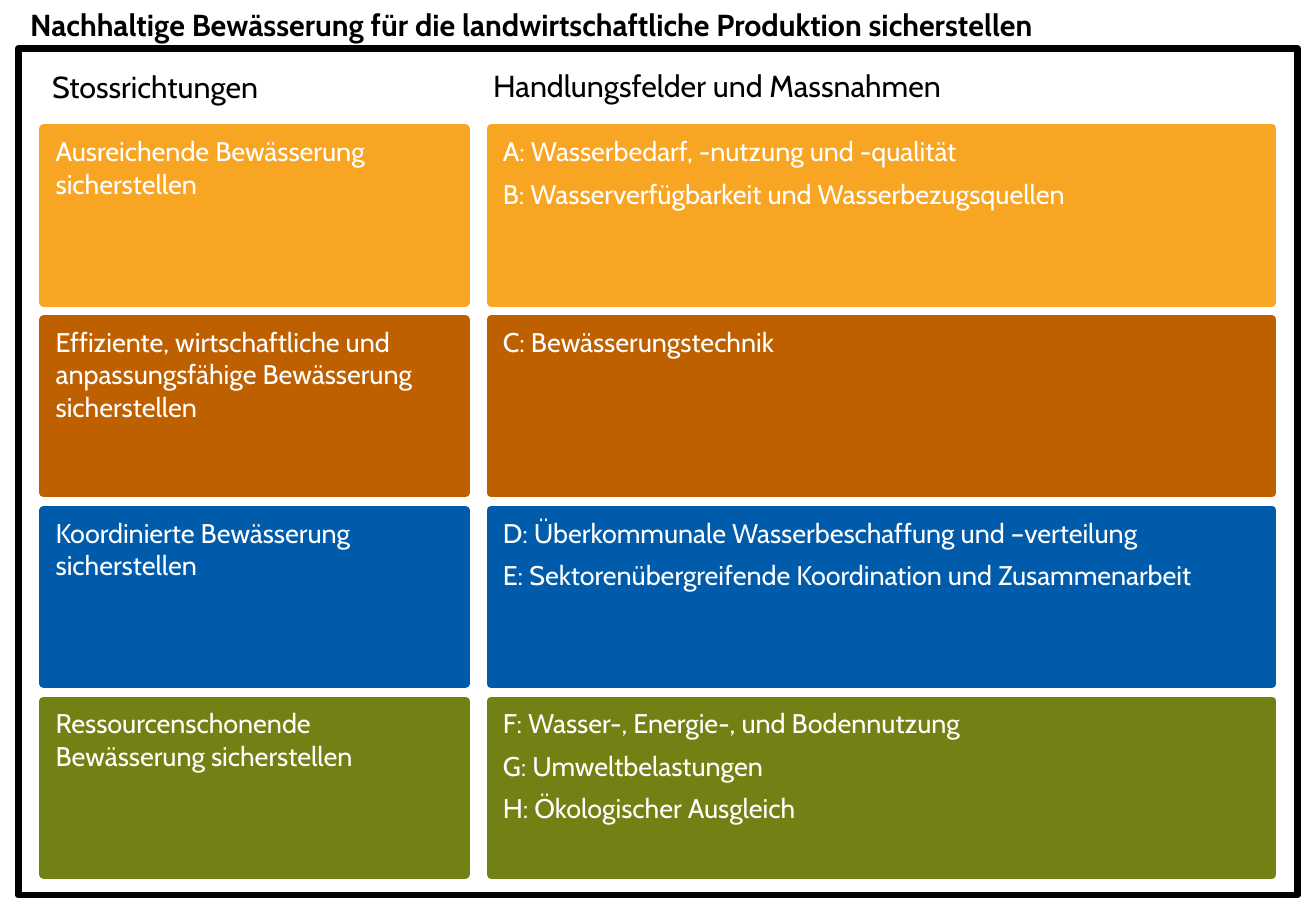
import pptx
import pptx.util
import pptx.dml.color
import pptx.enum.shapes
import pptx.enum.text

Inches = pptx.util.Inches
Pt = pptx.util.Pt

FONT = "Cabin"
ROW_TOP, ROW_HEIGHT, ROW_PITCH = 1.06, 1.43, 1.57
GOAL_LEFT, GOAL_WIDTH = 0.36, 3.47
FIELD_LEFT, FIELD_WIDTH = 4.04, 6.43

ROWS = [
    ("F8A523", "Ausreichende Bewässerung sicherstellen",
     ["A: Wasserbedarf, -nutzung und -qualität",
      "B: Wasserverfügbarkeit und Wasserbezugsquellen"]),
    ("BE5F00", "Effiziente, wirtschaftliche und anpassungsfähige Bewässerung sicherstellen",
     ["C: Bewässerungstechnik"]),
    ("005BAA", "Koordinierte Bewässerung sicherstellen",
     ["D: Überkommunale Wasserbeschaffung und –verteilung",
      "E: Sektorenübergreifende Koordination und Zusammenarbeit"]),
    ("738114", "Ressourcenschonende Bewässerung sicherstellen",
     ["F: Wasser-, Energie-, und Bodennutzung",
      "G: Umweltbelastungen",
      "H: Ökologischer Ausgleich"]),
]


def color(value):
    return pptx.dml.color.RGBColor.from_string(value)


def write_lines(shape, lines, size, font_color, bold=False):
    frame = shape.text_frame
    frame.word_wrap = True
    frame.vertical_anchor = pptx.enum.text.MSO_ANCHOR.TOP
    for index, line in enumerate(lines):
        para = frame.add_paragraph() if index else frame.paragraphs[0]
        para.text = line
        para.alignment = pptx.enum.text.PP_ALIGN.LEFT
        if index:
            para.space_before = Pt(6)
        para.font.name = FONT
        para.font.size = Pt(size)
        para.font.bold = bold
        para.font.color.rgb = color(font_color)


def add_heading(page, left, top, width, text, bold=False):
    box = page.shapes.add_textbox(Inches(left), Inches(top), Inches(width), Inches(0.4))
    write_lines(box, [text], 18, "000000", bold)


def add_rectangle(page, left, top, width, height, line_color, line_width):
    shape = page.shapes.add_shape(
        pptx.enum.shapes.MSO_SHAPE.RECTANGLE,
        Inches(left), Inches(top), Inches(width), Inches(height))
    shape.shadow.inherit = False
    shape.fill.background()
    shape.line.color.rgb = color(line_color)
    shape.line.width = Pt(line_width)
    return shape


def add_card(page, left, top, width, height, fill_color, lines):
    card = add_rectangle(page, left, top, width, height, fill_color, 5)
    card.fill.solid()
    card.fill.fore_color.rgb = color(fill_color)
    write_lines(card, lines, 16, "FFFFFF")


def add_row(page, top, height, fill_color, goal, fields):
    add_card(page, GOAL_LEFT, top, GOAL_WIDTH, height, fill_color, [goal])
    add_card(page, FIELD_LEFT, top, FIELD_WIDTH, height, fill_color, fields)


def main():
    deck = pptx.Presentation()
    deck.slide_width = Inches(10.83)
    deck.slide_height = Inches(7.5)
    page = deck.slides.add_slide(deck.slide_layouts[6])

    add_heading(page, 0.15, 0, 9, "Nachhaltige Bewässerung für die landwirtschaftliche "
                "Produktion sicherstellen", bold=True)
    add_rectangle(page, 0.15, 0.4, 10.53, 6.97, "000000", 4)
    add_heading(page, 0.33, 0.51, GOAL_WIDTH, "Stossrichtungen")
    add_heading(page, 3.96, 0.5, FIELD_WIDTH, "Handlungsfelder und Massnahmen")
    for index, (fill_color, goal, fields) in enumerate(ROWS):
        add_row(page, ROW_TOP + index * ROW_PITCH, ROW_HEIGHT, fill_color, goal, fields)

    deck.save("out.pptx")


if __name__ == "__main__":
    main()
